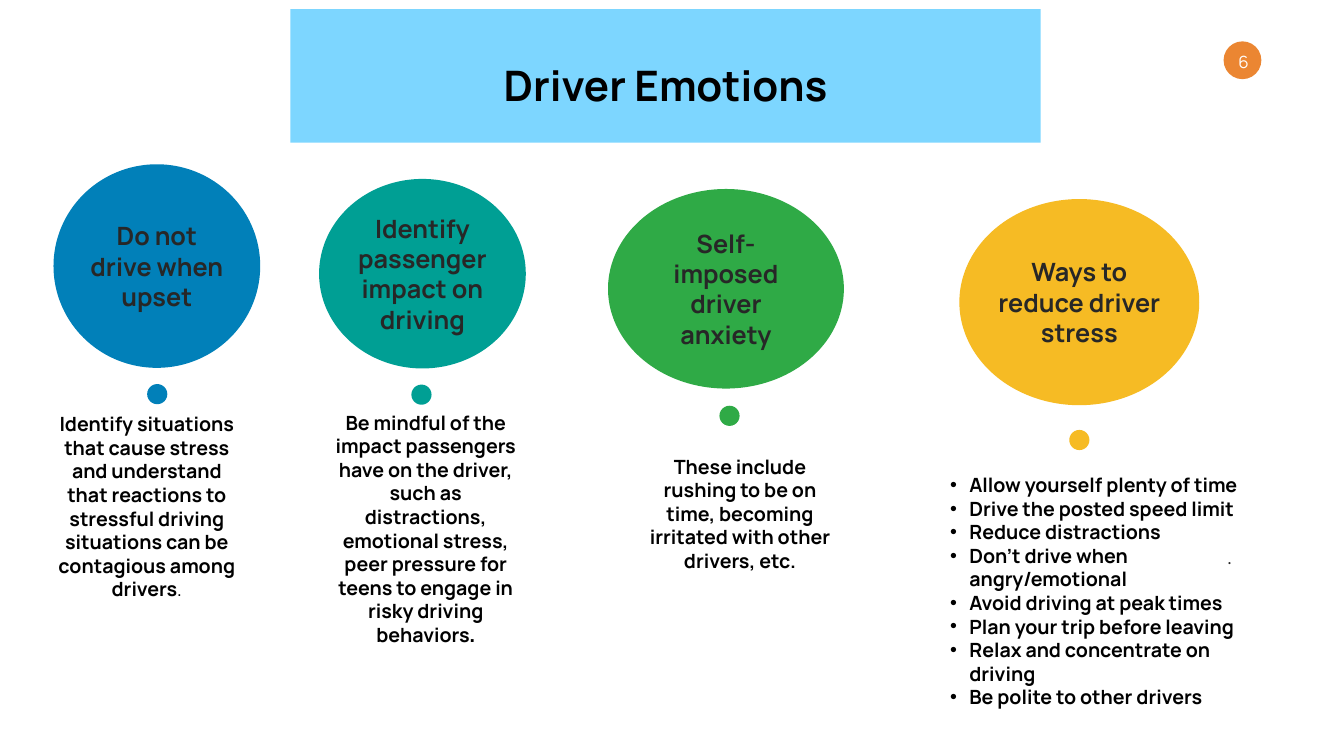
from lxml.etree import SubElement
from pptx import Presentation
from pptx.dml.color import RGBColor
from pptx.enum.shapes import MSO_SHAPE as Shape
from pptx.enum.text import MSO_ANCHOR as Anchor, PP_ALIGN as Align
from pptx.oxml.ns import qn
from pptx.util import Inches, Pt

BLUE = RGBColor(0x01, 0x80, 0xB9)
TEAL = RGBColor(0x00, 0x9F, 0x94)
GREEN = RGBColor(0x2F, 0xAA, 0x46)
YELLOW = RGBColor(0xF6, 0xBB, 0x24)
SKY = RGBColor(0x7D, 0xD6, 0xFF)
ORANGE = RGBColor(0xEB, 0x86, 0x32)
DARK = RGBColor(0x27, 0x27, 0x27)
BLACK = RGBColor(0, 0, 0)
WHITE = RGBColor(255, 255, 255)

deck = Presentation()
deck.slide_width, deck.slide_height = Inches(26.66), Inches(15)
page = deck.slides.add_slide(deck.slide_layouts[6])


def add_box(share, fill=None, kind=None):
    left, top, width, height = share
    place = [int(deck.slide_width * left / 100), int(deck.slide_height * top / 100),
             int(deck.slide_width * width / 100), int(deck.slide_height * height / 100)]
    if kind is None:
        box = page.shapes.add_textbox(*place)
    else:
        box = page.shapes.add_shape(kind, *place)
        box.shadow.inherit = False
        box.line.fill.background()
        if fill is None:
            box.fill.background()
        else:
            box.fill.solid()
            box.fill.fore_color.rgb = fill
    return box


def write(box, text, size, color, inset=(0, 0), bold=True, anchor=Anchor.TOP,
          align=Align.CENTER, font="Manrope"):
    frame = box.text_frame
    frame.word_wrap = True
    frame.vertical_anchor = anchor
    frame.margin_left = frame.margin_right = Inches(inset[0])
    frame.margin_top = frame.margin_bottom = Inches(inset[1])
    frame.text = text
    for para in frame.paragraphs:
        para.alignment = align
        for span in para.runs:
            span.font.name = font
            span.font.size = Pt(size)
            span.font.bold = bold
            span.font.color.rgb = color
    return frame


add_box((91.04, 5.47, 2.81, 5), ORANGE, Shape.OVAL)
number = add_box((91.22, 5.8, 2.63, 4.67), kind=Shape.OVAL)
write(number, "6", 24, WHITE, bold=False, anchor=Anchor.MIDDLE)

title = add_box((21.61, 1.2, 55.81, 17.67), SKY, Shape.RECTANGLE)
title_frame = write(title, "Driver Emotions", 60, BLACK, (0.1, 0.05))
title_frame.margin_top = Inches(1)

topics = [
    (BLUE, "Do not drive when upset", 0, (3.98, 21.73, 15.38, 26.93), (10.95, 50.8)),
    (TEAL, "Identify passenger impact on driving", 0, (23.74, 23.67, 15.38, 25.07), (30.61, 50.87)),
    (GREEN, "Self-imposed driver anxiety", 0.15, (45.24, 25, 17.55, 26.4), (53.53, 53.67)),
    (YELLOW, "Ways to reduce driver stress", 0, (71.38, 26.33, 17.85, 27.27), (79.56, 56.87)),
]
for color, heading, side, circle, dot in topics:
    topic = add_box(circle, color, Shape.OVAL)
    write(topic, heading, 36, DARK, (side, 0), anchor=Anchor.MIDDLE)
    add_box((*dot, 1.5, 2.67), color, Shape.OVAL)

details = [
    ("Identify situations that cause stress and understand that reactions to stressful "
     "driving situations can be contagious among drivers", (3.98, 53.87, 13.88, 39.53), 0, (24, False)),
    ("Be mindful of the impact passengers have on the driver, such as distractions, "
     "emotional stress, peer pressure for teens to engage in risky driving behaviors",
     (22.24, 53.67, 16.77, 38.8), 0.56, (28, True)),
    ("These include rushing to be on time, becoming irritated with other drivers, etc.",
     (45.57, 59.47, 17.1, 29.87), 0.5, None),
]
for text, share, indent, full_stop in details:
    frame = write(add_box(share), text, 28, BLACK, (0.1, 0.1))
    para = frame.paragraphs[0]
    para._p.get_or_add_pPr().set("marL", str(Inches(indent)))
    if full_stop:
        span = para.add_run()
        span.text = "."
        span.font.name = "Arial"
        span.font.size, span.font.bold = Pt(full_stop[0]), full_stop[1]
        span.font.color.rgb = BLACK

tips = [
    "Allow yourself plenty of time",
    "Drive the posted speed limit",
    "Reduce distractions",
    "Don’t drive when angry/emotional",
    "Avoid driving at peak times",
    "Plan your trip before leaving",
    "Relax and concentrate on driving",
    "Be polite to other drivers",
]
tip_box = add_box((70.33, 61.93, 23.71, 34.13))
tip_frame = write(tip_box, "\n".join(tips), 28, BLACK, (0.1, 0.1), align=Align.LEFT)
for para in tip_frame.paragraphs:
    properties = para._p.get_or_add_pPr()
    properties.set("marL", str(Inches(0.38)))
    properties.set("indent", str(-Inches(0.38)))
    SubElement(properties, qn("a:buFont"), typeface="Arial")
    SubElement(properties, qn("a:buChar"), char="•")

point = add_box((85.67, 70.87, 11.63, 10.13))
point_frame = write(point, ".", 24, DARK, (0.1, 0.05), bold=False, font="Lato")
point_frame.paragraphs[0].line_spacing = 1.46

deck.save("out.pptx")
